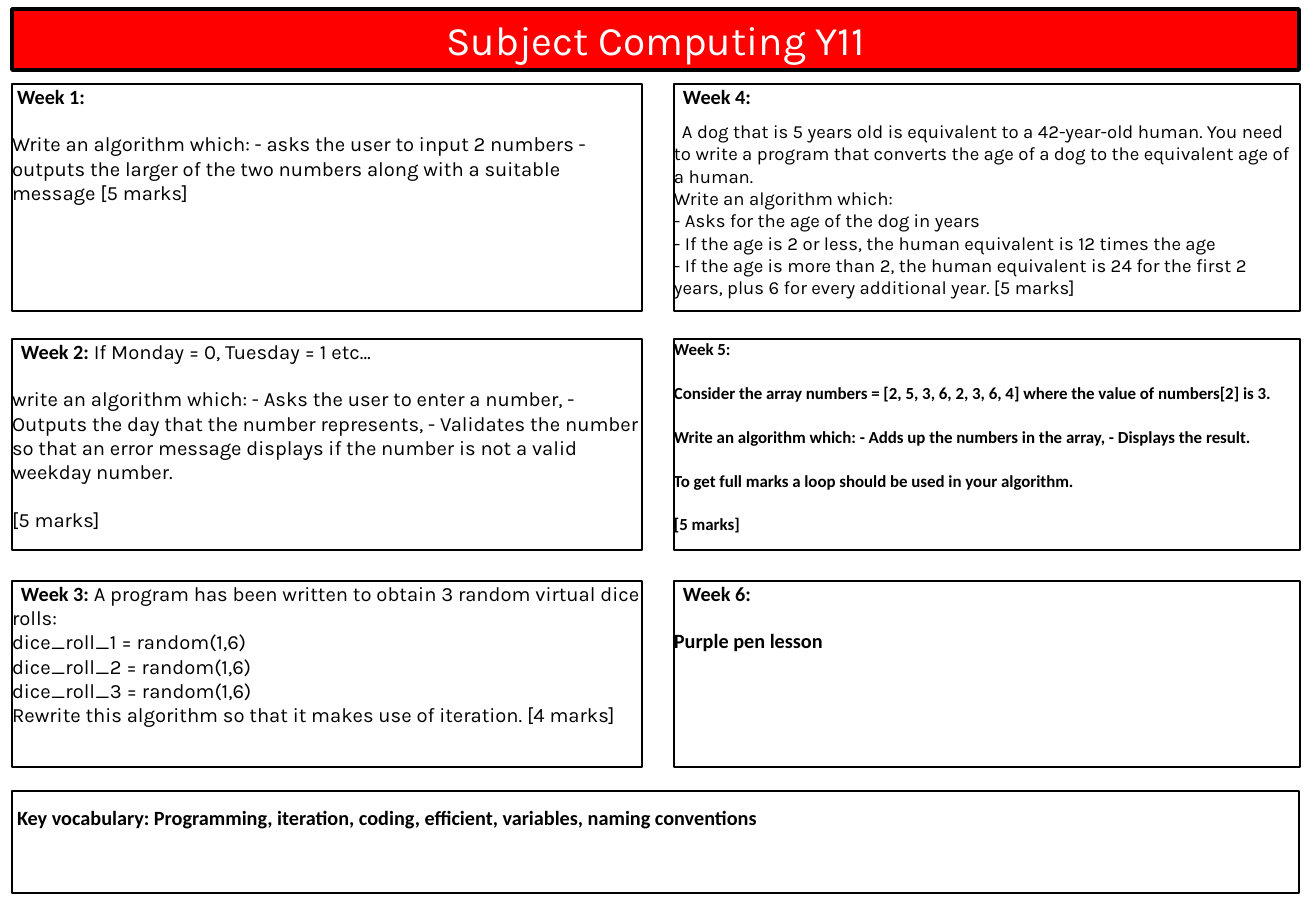
"""Build the Computing Y11 six-week algorithm homework sheet."""
from collections import namedtuple

from pptx import Presentation
from pptx.dml.color import RGBColor
from pptx.enum.shapes import MSO_SHAPE as Shape
from pptx.enum.text import MSO_ANCHOR as Anchor, MSO_AUTO_SIZE as AutoSize, PP_ALIGN as Align
from pptx.util import Pt

PX = 7526
SLIDE_SIZE = (1316, 911)
BLACK, WHITE, RED = "000000", "FFFFFF", "FF0000"
HEADING_FONT, BODY_FONT = "Calibri", "Karla"
GAP = 13.9

TITLE = "Subject Computing Y11"
VOCABULARY = "Key vocabulary: Programming, iteration, coding, efficient, variables, naming conventions"

Week = namedtuple("Week", "heading lead tasks indent heading_size task_size font gaps task_indent",
                  defaults=(9, 12, 12, BODY_FONT, (GAP,), 0))
WEEKS = [
    Week("Week 1:", "", [
        "Write an algorithm which: - asks the user to input 2 numbers - outputs the larger "
        "of the two numbers along with a suitable message [5 marks]",
    ], indent=5),
    Week("Week 2: ", "If Monday = 0, Tuesday = 1 etc…", [
        "write an algorithm which: - Asks the user to enter a number, - Outputs the day that "
        "the number represents, - Validates the number so that an error message displays if "
        "the number is not a valid weekday number.",
        "[5 marks]",
    ]),
    Week("Week 3: ", "A program has been written to obtain 3 random virtual dice rolls:", [
        "dice_roll_1 = random(1,6)",
        "dice_roll_2 = random(1,6)",
        "dice_roll_3 = random(1,6)",
        "Rewrite this algorithm so that it makes use of iteration. [4 marks]",
    ], gaps=(0,)),
    Week("Week 4:", "", [
        "A dog that is 5 years old is equivalent to a 42-year-old human. You need to write a "
        "program that converts the age of a dog to the equivalent age of a human.",
        "Write an algorithm which:",
        "- Asks for the age of the dog in years",
        "- If the age is 2 or less, the human equivalent is 12 times the age",
        "- If the age is more than 2, the human equivalent is 24 for the first 2 years, plus 6 "
        "for every additional year. [5 marks]",
    ], task_size=11, gaps=(7, 0), task_indent=8),
    Week("Week 5:", "", [
        "Consider the array numbers = [2, 5, 3, 6, 2, 3, 6, 4] where the value of numbers[2] is 3.",
        "Write an algorithm which: - Adds up the numbers in the array, - Displays the result.",
        "To get full marks a loop should be used in your algorithm.",
        "[5 marks]",
    ], indent=0, heading_size=10, task_size=10, font=HEADING_FONT),
    Week("Week 6:", "", ["Purple pen lesson"], font=HEADING_FONT),
]

COLUMNS = [(12, 630), (674, 626)]
ROWS = [(84, 227), (339, 211), (581, 186)]
TITLE_BOX = (12, 9, 1287, 61)
VOCABULARY_BOX = (12, 791, 1287, 102)


def colour(code):
    return RGBColor.from_string(code)


def place(box, left, top, width, height):
    box.left, box.top, box.width, box.height = (n * PX for n in (left, top, width, height))


def outline(box, points):
    box.line.color.rgb = colour(BLACK)
    box.line.width = Pt(points)


def style(run, font, size, ink=BLACK):
    run.font.name, run.font.size = font, Pt(size)
    run.font.bold = font == HEADING_FONT
    run.font.color.rgb = colour(ink)


def add_panel(slide, bounds, top_inset=0):
    panel = slide.shapes.add_shape(Shape.RECTANGLE, *(n * PX for n in bounds))
    panel.shadow.inherit = False
    panel.fill.background()
    outline(panel, 1)
    frame = panel.text_frame
    frame.word_wrap = True
    frame.vertical_anchor = Anchor.TOP
    frame.margin_left = frame.margin_right = frame.margin_bottom = 0
    frame.margin_top = top_inset * PX
    return frame


def write(paragraph, pieces, indent=0, gap=0):
    paragraph.alignment = Align.LEFT
    if indent:
        properties = paragraph._p.get_or_add_pPr()
        properties.set("marL", "0")
        properties.set("indent", str(indent * PX))
    if gap:
        paragraph.space_before = Pt(gap)
    for words, font, size in pieces:
        run = paragraph.add_run()
        run.text = words
        style(run, font, size)


def add_week(slide, week, bounds):
    frame = add_panel(slide, bounds)
    pieces = [(week.heading, HEADING_FONT, week.heading_size)]
    if week.lead:
        pieces.append((week.lead, week.font, week.task_size))
    write(frame.paragraphs[0], pieces, week.indent)
    for number, task in enumerate(week.tasks):
        gap = week.gaps[min(number, len(week.gaps) - 1)]
        indent = 0 if number else week.task_indent
        write(frame.add_paragraph(), [(task, week.font, week.task_size)], indent, gap)


def add_title(slide):
    title = slide.shapes.title
    place(title, *TITLE_BOX)
    title.fill.solid()
    title.fill.fore_color.rgb = colour(RED)
    outline(title, 2.25)
    frame = title.text_frame
    frame.text = TITLE
    frame.auto_size = AutoSize.NONE
    frame.vertical_anchor = Anchor.MIDDLE
    frame.paragraphs[0].alignment = Align.CENTER
    style(frame.paragraphs[0].runs[0], BODY_FONT, 24, WHITE)


def main():
    deck = Presentation()
    deck.slide_width, deck.slide_height = (n * PX for n in SLIDE_SIZE)
    slide = deck.slides.add_slide(deck.slide_layouts[5])
    add_title(slide)
    for number, week in enumerate(WEEKS):
        column, row = divmod(number, len(ROWS))
        (left, width), (top, height) = COLUMNS[column], ROWS[row]
        add_week(slide, week, (left, top, width, height))
    vocabulary = add_panel(slide, VOCABULARY_BOX, top_inset=19).paragraphs[0]
    write(vocabulary, [(VOCABULARY, HEADING_FONT, 12)], indent=5)
    vocabulary.alignment = Align.JUSTIFY
    vocabulary.line_spacing = Pt(11.5)
    deck.save("out.pptx")


if __name__ == "__main__":
    main()
